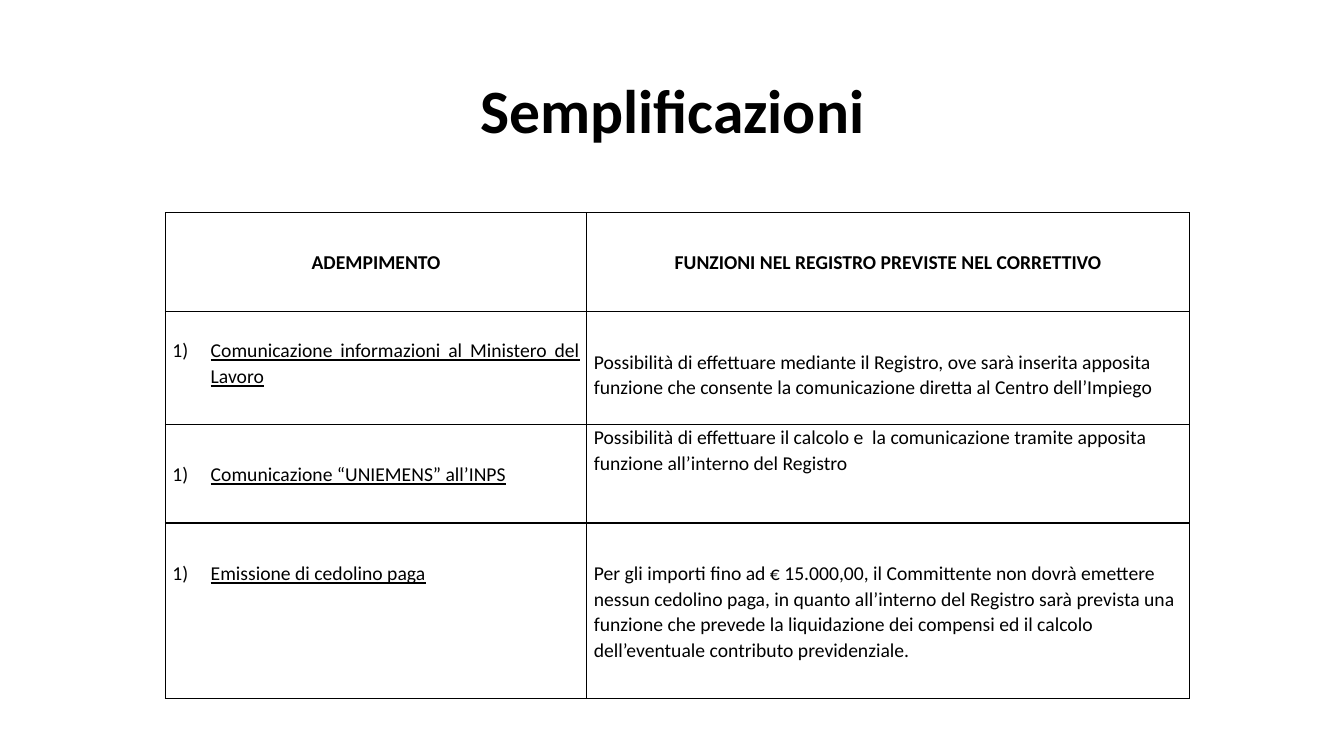
from pptx import Presentation
from pptx.dml.color import RGBColor
from pptx.enum.text import MSO_ANCHOR, PP_ALIGN
from pptx.oxml.ns import qn
from pptx.util import Inches, Pt
from lxml.etree import SubElement

BLACK = "000000"
COLUMNS = (4.18, 5.98)
ROWS = (0.98, 1.12, 0.98, 1.74)
HEADERS = ("ADEMPIMENTO", "FUNZIONI NEL REGISTRO PREVISTE NEL CORRETTIVO")
# Each row: duty, its top inset, function in the register, its top inset
DUTIES = (
    ("Comunicazione informazioni al Ministero del Lavoro", 0.26,
     "Possibilità di effettuare mediante il Registro, ove sarà inserita apposita "
     "funzione che consente la comunicazione diretta al Centro dell’Impiego", 0.37),
    ("Comunicazione “UNIEMENS” all’INPS", 0.37,
     "Possibilità di effettuare il calcolo e  la comunicazione tramite apposita "
     "funzione all’interno del Registro", 0),
    ("Emissione di cedolino paga", 0.37,
     "Per gli importi fino ad € 15.000,00, il Committente non dovrà emettere "
     "nessun cedolino paga, in quanto all’interno del Registro sarà prevista una "
     "funzione che prevede la liquidazione dei compensi ed il calcolo "
     "dell’eventuale contributo previdenziale.", 0.37),
)


def color(value):
    return RGBColor.from_string(value)


def write(tf, text, size=14, bold=False, underline=False,
          align=PP_ALIGN.LEFT, spacing=1.07):
    p = tf.paragraphs[0]
    p.alignment = align
    p.line_spacing = spacing
    r = p.add_run()
    r.text = text
    r.font.name = "Calibri"
    r.font.size = Pt(size)
    r.font.bold = bold
    r.font.underline = underline
    r.font.color.rgb = color(BLACK)
    return p


def number(p, indent=0.38):
    pPr = p._p.get_or_add_pPr()
    pPr.set("marL", str(Inches(indent)))
    pPr.set("indent", str(Inches(-indent)))
    SubElement(pPr, qn("a:buAutoNum"), type="arabicParenR")


def add_borders(cell):
    tcPr = cell._tc.get_or_add_tcPr()
    for side in ("lnL", "lnR", "lnT", "lnB"):
        ln = SubElement(tcPr, qn("a:" + side), w=str(Pt(1)))
        fill = SubElement(ln, qn("a:solidFill"))
        SubElement(fill, qn("a:srgbClr"), val=BLACK)


def fill_cell(cell, text, top=0, anchor=MSO_ANCHOR.TOP, **fmt):
    add_borders(cell)
    cell.fill.background()
    cell.margin_left = cell.margin_right = Inches(0.07)
    cell.margin_top = Inches(top)
    cell.margin_bottom = 0
    cell.vertical_anchor = anchor
    return write(cell.text_frame, text, **fmt)


def add_title(s, text):
    title = s.shapes.title
    title.left, title.top = Inches(0.92), Inches(0.4)
    title.width, title.height = Inches(11.5), Inches(1.45)
    title.text_frame.vertical_anchor = MSO_ANCHOR.MIDDLE
    write(title.text_frame, text, size=44, bold=True,
          align=PP_ALIGN.CENTER, spacing=0.9)


def add_duties_table(s):
    table = s.shapes.add_table(
        len(ROWS), len(COLUMNS), Inches(1.64), Inches(2.11),
        Inches(sum(COLUMNS)), Inches(sum(ROWS))).table
    table.horz_banding = False
    for column, width in zip(table.columns, COLUMNS):
        column.width = Inches(width)
    for row, height in zip(table.rows, ROWS):
        row.height = Inches(height)
    for i, header in enumerate(HEADERS):
        fill_cell(table.cell(0, i), header, anchor=MSO_ANCHOR.MIDDLE,
                  bold=True, align=PP_ALIGN.CENTER)
    for i, (duty, duty_top, function, function_top) in enumerate(DUTIES, 1):
        number(fill_cell(table.cell(i, 0), duty, top=duty_top,
                         underline=True, align=PP_ALIGN.JUSTIFY))
        fill_cell(table.cell(i, 1), function, top=function_top)


def main():
    prs = Presentation()
    prs.slide_width, prs.slide_height = Inches(13.33), Inches(7.5)
    s = prs.slides.add_slide(prs.slide_layouts[5])
    add_title(s, "Semplificazioni")
    add_duties_table(s)
    prs.save("out.pptx")


if __name__ == "__main__":
    main()
